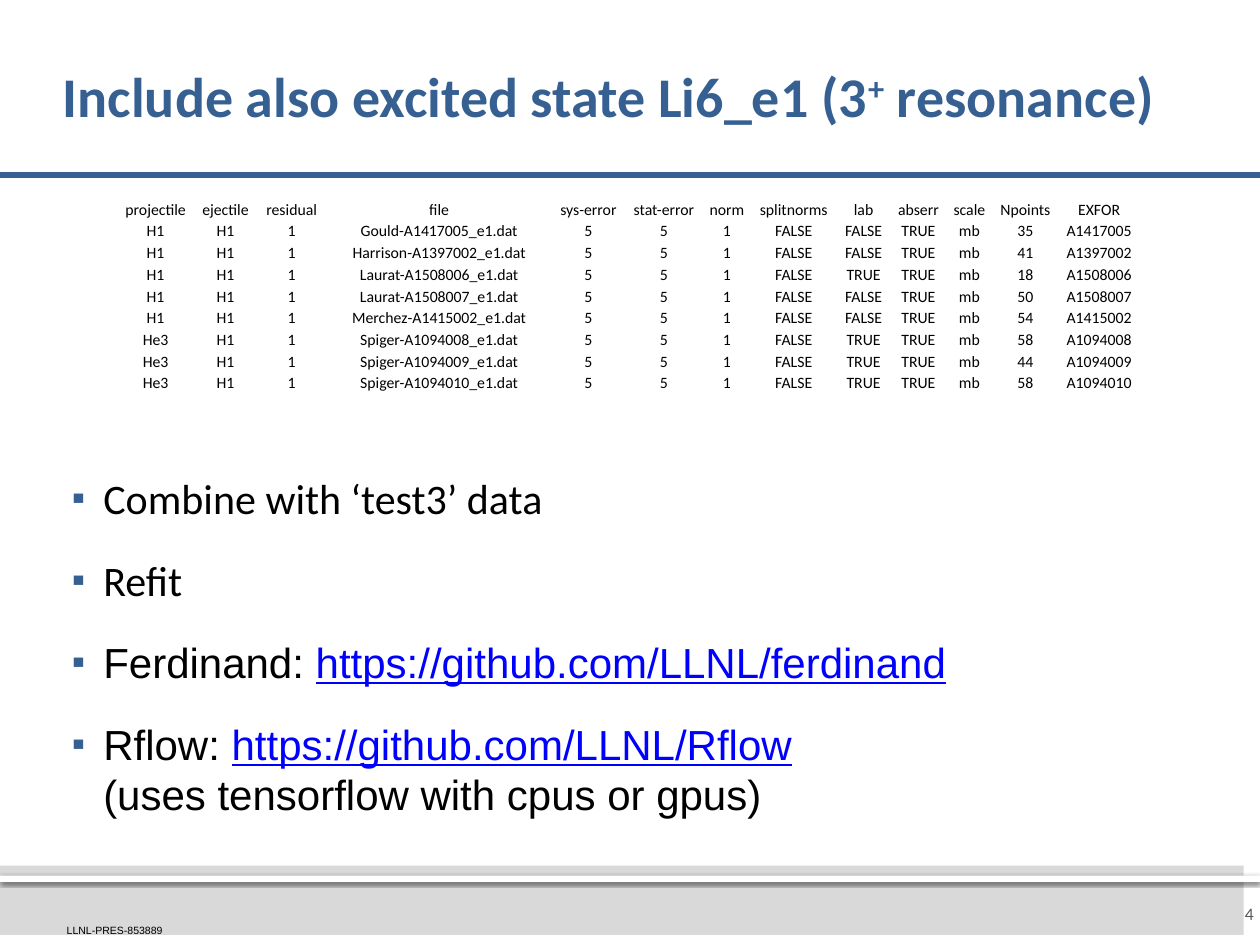
"""Build the slide on the excited state Li6_e1 data sets."""
from lxml.etree import SubElement
from pptx import Presentation
from pptx.dml.color import RGBColor
from pptx.enum.shapes import MSO_CONNECTOR, MSO_SHAPE
from pptx.enum.text import MSO_ANCHOR, PP_ALIGN
from pptx.oxml.ns import qn
from pptx.util import Inches, Pt

BLUE = RGBColor(0x37, 0x60, 0x92)
LINK = RGBColor(0x00, 0x00, 0xFF)
BLACK = RGBColor(0x00, 0x00, 0x00)
WHITE = RGBColor(0xFF, 0xFF, 0xFF)
PALE = RGBColor(0xD9, 0xD9, 0xD9)
GRAY = RGBColor(0x59, 0x59, 0x59)

TITLE = ("Include also excited state Li6_e1 (3", "+", " resonance)")
COLUMNS = [
    ("projectile", 0.61), ("ejectile", 0.5), ("residual", 0.55), ("file", 1.79),
    ("sys-error", 0.58), ("stat-error", 0.62), ("norm", 0.38),
    ("splitnorms", 0.68), ("lab", 0.43), ("abserr", 0.44), ("scale", 0.37),
    ("Npoints", 0.52), ("EXFOR", 0.65),
]
DATA_SETS = [
    ("H1", "Gould", "A1417005", "FALSE", "35"),
    ("H1", "Harrison", "A1397002", "FALSE", "41"),
    ("H1", "Laurat", "A1508006", "TRUE", "18"),
    ("H1", "Laurat", "A1508007", "FALSE", "50"),
    ("H1", "Merchez", "A1415002", "FALSE", "54"),
    ("He3", "Spiger", "A1094008", "TRUE", "58"),
    ("He3", "Spiger", "A1094009", "TRUE", "44"),
    ("He3", "Spiger", "A1094010", "TRUE", "58"),
]
BULLETS = [
    ("Calibri", "Combine with ‘test3’ data", "", ""),
    ("Calibri", "Refit", "", ""),
    ("Arial", "Ferdinand: ", "https://github.com/LLNL/ferdinand", ""),
    ("Arial", "Rflow: ", "https://github.com/LLNL/Rflow",
     "(uses tensorflow with cpus or gpus)"),
]


def set_font(font, name, size, color, bold=False):
    font.name, font.size, font.bold = name, Pt(size), bold
    font.color.rgb = color


def set_margins(frame, left, top, right, bottom):
    frame.margin_left, frame.margin_top = Inches(left), Inches(top)
    frame.margin_right, frame.margin_bottom = Inches(right), Inches(bottom)


def add_text(page, place, margins, anchor):
    frame = page.shapes.add_textbox(*map(Inches, place)).text_frame
    frame.word_wrap = True
    frame.vertical_anchor = anchor
    set_margins(frame, *margins)
    return frame


def add_band(page, place, color):
    band = page.shapes.add_shape(MSO_SHAPE.RECTANGLE, *map(Inches, place))
    band.shadow.inherit = False
    band.fill.solid()
    band.fill.fore_color.rgb = color
    band.line.fill.background()
    return band


def add_shadow(shape):
    effects = shape._element.spPr.find(qn("a:effectLst"))
    shadow = SubElement(effects, qn("a:outerShdw"), blurRad=str(Pt(2.5)),
                        dist=str(Pt(0.8)), dir="5400000", rotWithShape="0")
    color = SubElement(shadow, qn("a:srgbClr"), val=str(BLACK))
    SubElement(color, qn("a:alpha"), val="60000")


def add_frame(page):
    add_band(page, (-0.13, 6.87, 10, 0.55), PALE)
    footer = add_text(page, (0.53, 7.33, 0.96, 0.1), (0, 0, 0, 0), MSO_ANCHOR.BOTTOM)
    footer.word_wrap = False
    footer.text = "LLNL-PRES-853889"
    set_font(footer.paragraphs[0].font, "Arial", 6, BLACK)
    add_shadow(add_band(page, (0, 6.95, 10, 0.05), WHITE))
    number = add_text(page, (9.65, 7, 0.35, 0.5), (0.1, 0.05, 0.05, 0.05),
                      MSO_ANCHOR.MIDDLE)
    number.text = "4"
    number.paragraphs[0].alignment = PP_ALIGN.RIGHT
    set_font(number.paragraphs[0].font, "Calibri", 10, GRAY)
    rule = page.shapes.add_connector(
        MSO_CONNECTOR.STRAIGHT, *map(Inches, (-0.01, 1.39, 10, 1.39)))
    rule.line.color.rgb = BLUE
    rule.line.width = Pt(3)
    SubElement(rule._element.spPr, qn("a:effectLst"))


def add_title(page):
    frame = add_text(page, (0.5, 0.24, 9, 1.1), (0, 0.05, 0.05, 0.05),
                     MSO_ANCHOR.MIDDLE)
    para = frame.paragraphs[0]
    para.line_spacing = 0.9
    set_font(para.font, "Calibri", 32, BLUE, bold=True)
    for text in TITLE:
        span = para.add_run()
        span.text = text
        if text == "+":
            span.font._element.set("baseline", "30000")


def add_data_table(page):
    rows = [[name for name, _ in COLUMNS]]
    for projectile, author, entry, lab, points in DATA_SETS:
        rows.append([projectile, "H1", "1", f"{author}-{entry}_e1.dat", "5", "5",
                     "1", "FALSE", lab, "TRUE", "mb", points, entry])
    table = page.shapes.add_table(
        len(rows), len(COLUMNS), *map(Inches, (0.93, 1.57, 8.13, 1.55))).table
    table.first_row = table.horz_banding = False
    for column, (_, width) in zip(table.columns, COLUMNS):
        column.width = Inches(width)
    for row, texts in zip(table.rows, rows):
        for cell, text in zip(row.cells, texts):
            cell.text = text
            cell.fill.background()
            cell.vertical_anchor = MSO_ANCHOR.BOTTOM
            set_margins(cell, 0.01, 0.01, 0.01, 0)
            para = cell.text_frame.paragraphs[0]
            para.alignment = PP_ALIGN.CENTER
            set_font(para.font, "Calibri", 9, BLACK)


def set_bullet(para):
    properties = para._p.get_or_add_pPr()
    properties.set("marL", str(Inches(0.31)))
    properties.set("indent", str(Inches(-0.25)))
    color = SubElement(properties, qn("a:buClr"))
    SubElement(color, qn("a:srgbClr"), val=str(BLUE))
    SubElement(properties, qn("a:buSzPct"), val="90000")
    SubElement(properties, qn("a:buFont"), typeface="Arial")
    SubElement(properties, qn("a:buChar"), char="▪")


def add_bullets(page):
    frame = add_text(page, (0.51, 3.75, 8.99, 3.16), (0, 0, 0, 0), MSO_ANCHOR.TOP)
    for index, (font, lead, link, second_line) in enumerate(BULLETS):
        para = frame.add_paragraph() if index else frame.paragraphs[0]
        set_bullet(para)
        para.space_before = Pt(12 if index else 0)
        para.space_after = Pt(6)
        set_font(para.font, font, 24, BLACK)
        para.add_run().text = lead
        if link:
            span = para.add_run()
            span.text = link
            span.font.color.rgb = LINK
            span.font.underline = True
        if second_line:
            para.add_line_break()
            para.add_run().text = second_line


def main():
    deck = Presentation()
    deck.slide_width, deck.slide_height = Inches(10), Inches(7.5)
    page = deck.slides.add_slide(deck.slide_layouts[6])
    add_frame(page)
    add_title(page)
    add_data_table(page)
    add_bullets(page)
    deck.save("out.pptx")


if __name__ == "__main__":
    main()
